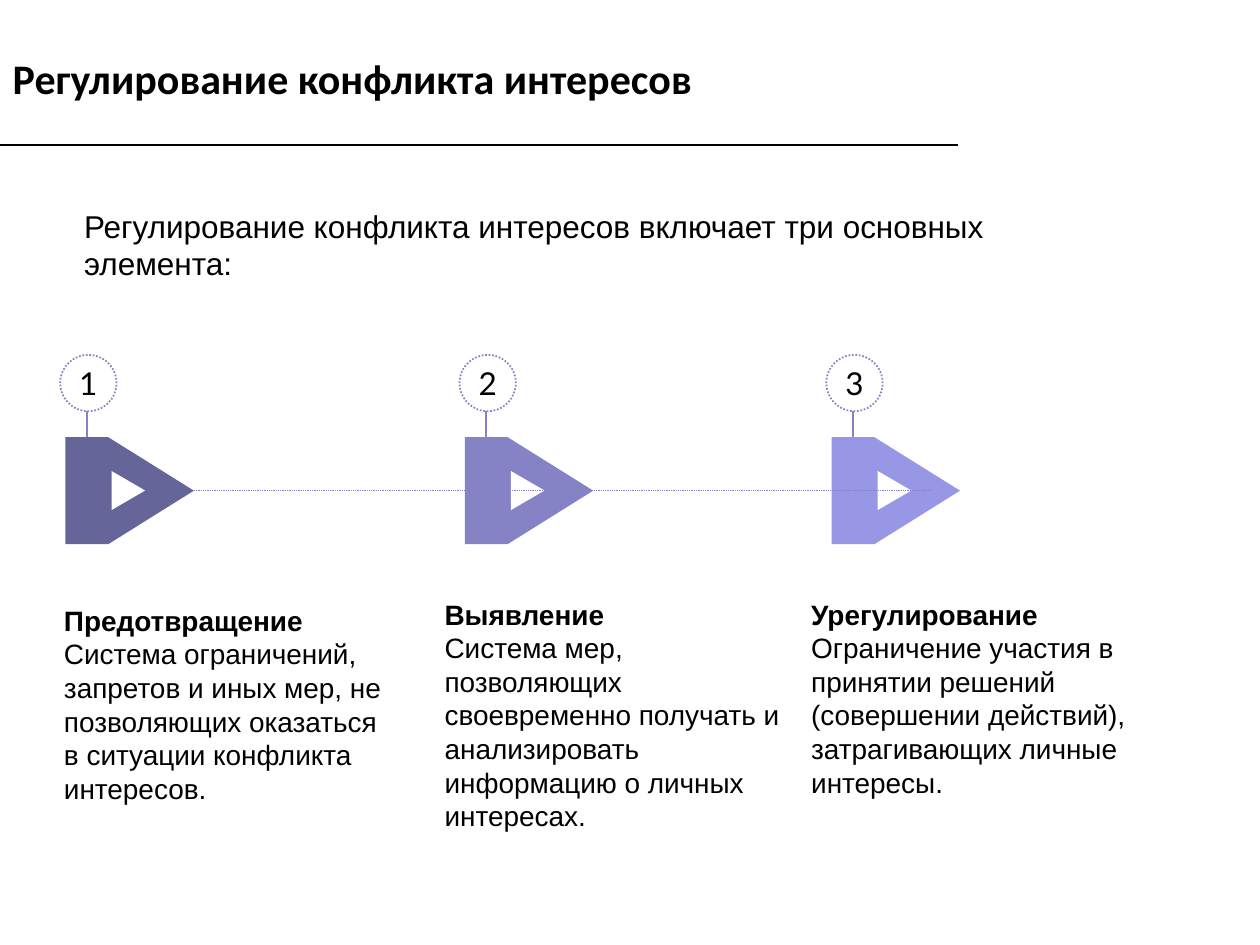
from lxml import etree
from pptx import Presentation
from pptx import util as u
from pptx.dml.color import RGBColor
from pptx.enum import dml, shapes, text
from pptx.oxml.ns import qn

COLORS = {"text": "000000", "white": "FFFFFF", "accent": "8583C6",
          "dark": "66659A", "light": "9897E6"}

STAGES = [
    ("1", "dark", 37.4, (29.5, 341.3, 122.4), "Предотвращение",
     "Система ограничений, запретов и иных мер, не позволяющих оказаться "
     "в ситуации конфликта интересов."),
    ("2", "accent", 265.6, (247, 337.7, 141.8), "Выявление",
     "Система мер, позволяющих своевременно получать и анализировать "
     "информацию о личных интересах."),
    ("3", "light", 475.2, (456.5, 337.7, 122.4), "Урегулирование",
     "Ограничение участия в принятии решений (совершении действий), "
     "затрагивающих личные интересы."),
]


class Deck:
    """Holds the style and the current slide, and draws its elements in points."""

    def __init__(self, width, height):
        self.prs = Presentation()
        self.prs.slide_width, self.prs.slide_height = u.Pt(width), u.Pt(height)
        self.s = self.prs.slides.add_slide(self.prs.slide_layouts[5])

    def color(self, name):
        return RGBColor.from_string(COLORS[name])

    def run(self, p, words, size, font="Arial", bold=False):
        r = p.add_run()
        r.text = words
        r.font.size, r.font.name, r.font.bold = u.Pt(size), font, bold
        r.font.color.rgb = self.color("text")

    def stroke(self, line, color, width, dotted=False):
        line.color.rgb = self.color(color)
        line.width = u.Pt(width)
        if dotted:
            line.dash_style = dml.MSO_LINE.ROUND_DOT

    def title(self, words, x, y, w, h):
        sp = self.s.shapes.title
        sp.left, sp.top, sp.width, sp.height = map(u.Pt, (x, y, w, h))
        tf = sp.text_frame
        tf.vertical_anchor = text.MSO_ANCHOR.MIDDLE
        p = tf.paragraphs[0]
        p.alignment, p.line_spacing = text.PP_ALIGN.LEFT, 0.9
        self.run(p, words, 24, "Calibri", True)

    def textbox(self, lines, x, y, w, h, size):
        tf = self.s.shapes.add_textbox(*map(u.Pt, (x, y, w, h))).text_frame
        tf.word_wrap = True
        tf.auto_size = text.MSO_AUTO_SIZE.SHAPE_TO_FIT_TEXT
        for i, (words, bold) in enumerate(lines):
            p = tf.add_paragraph() if i else tf.paragraphs[0]
            self.run(p, words, size, bold=bold)

    def line(self, x1, y1, x2, y2, color, width, dotted=False, parent=None):
        c = (parent or self.s).shapes.add_connector(
            shapes.MSO_CONNECTOR.STRAIGHT, *map(u.Pt, (x1, y1, x2, y2)))
        self.stroke(c.line, color, width, dotted)
        etree.SubElement(c._element.spPr, qn("a:effectLst"))

    def shape(self, parent, kind, x, y, w, h, fill=None):
        sp = parent.shapes.add_shape(kind, *map(u.Pt, (x, y, w, h)))
        sp.shadow.inherit = False
        sp.line.fill.background()
        if fill:
            sp.fill.solid()
            sp.fill.fore_color.rgb = self.color(fill)
        else:
            sp.fill.background()
        return sp

    def badge(self, parent, number, x, y, size):
        sp = self.shape(parent, shapes.MSO_SHAPE.OVAL, x, y, size, size)
        self.stroke(sp.line, "accent", 1, True)
        tf = sp.text_frame
        tf.margin_left = tf.margin_right = tf.margin_top = tf.margin_bottom = 0
        tf.vertical_anchor = text.MSO_ANCHOR.MIDDLE
        p = tf.paragraphs[0]
        p.alignment = text.PP_ALIGN.CENTER
        self.run(p, number, 18, "Lato")

    def marker(self, number, fill, x):
        g = self.s.shapes.add_group_shape()
        self.line(x + 12.2, 249.8, x + 12.2, 234.7, "accent", 1, parent=g)
        self.badge(g, number, x - 3, 202.8, 32.2)
        sp = self.shape(g, shapes.MSO_SHAPE.PENTAGON, x, 249.8, 73.4, 61.2, fill)
        sp.adjustments[0] = 0.8
        sp = self.shape(g, shapes.MSO_SHAPE.ISOSCELES_TRIANGLE,
                        x + 24.8, 270.7, 22.3, 19.2, "white")
        sp.rotation = 90


def main():
    d = Deck(720, 540)
    d.title("Регулирование конфликта интересов", 0, 21.6, 568, 49.7)
    d.line(0, 82.8, 547.2, 82.8, "text", 0.75)
    first, *others = STAGES
    for number, fill, x, *_ in reversed(others):
        d.marker(number, fill, x)
    d.line(110.9, 280.1, 532.8, 280.1, "accent", 0.5, True)
    d.marker(*first[:3])
    d.textbox([("Регулирование конфликта интересов включает три основных элемента:",
                False)], 41, 114.5, 614.2, 50.4, 18)
    for *_, (x, y, h), heading, body in STAGES:
        d.textbox([(heading, True), (body, False)], x, y, 205.9, h, 16)
    d.prs.save("out.pptx")


if __name__ == "__main__":
    main()
